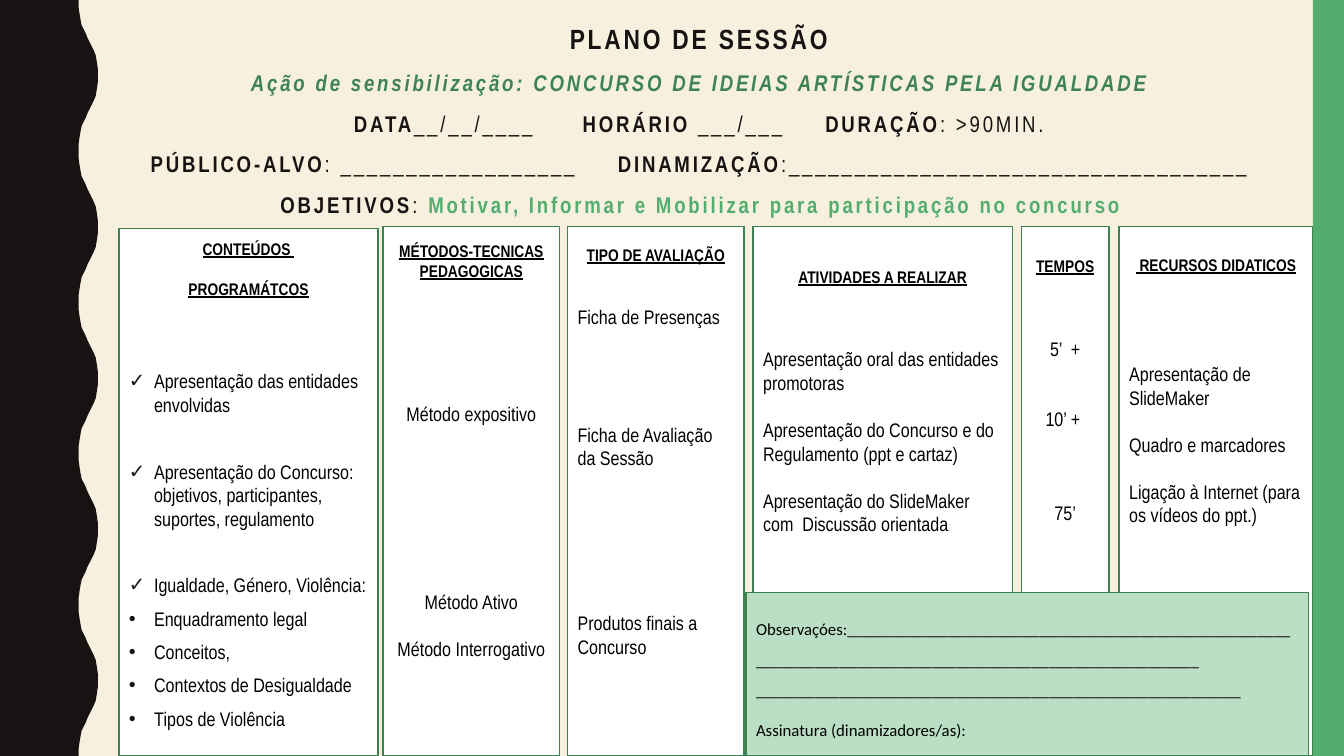
"""Build a one-slide session plan with six columns and a notes box."""
from dataclasses import dataclass

from lxml import etree
from pptx import Presentation
from pptx import util as u
from pptx.dml.color import RGBColor
from pptx.enum import shapes, text
from pptx.oxml.ns import qn

HUE = {"sand": "F7F0DF", "ink": "171312", "green": "53AE6E", "edge": "3D8151",
       "leaf": "3E8352", "pale": "BADFC5", "white": "FFFFFF", "black": "000000"}
MID, LEFT = text.PP_ALIGN.CENTER, text.PP_ALIGN.LEFT
NARROW = "Arial Narrow"


@dataclass
class Item:
    """One paragraph, with the space before it in points."""
    words: str
    gap: float = 0
    mark: str = ""


@dataclass
class Column:
    """One column: place, top inset in points, headings and body."""
    left: float
    wide: float
    inset: float
    heads: list[Item]
    body: list[Item]
    align: text.PP_ALIGN = LEFT
    top: float = 2.25


COLUMNS = [
    Column(1.18, 2.57, 7.3, [Item("CONTEÚDOS "), Item("PROGRAMÁTCOS", 14.3)], [
        Item("Apresentação das entidades envolvidas", 50, "✓"),
        Item("Apresentação do Concurso: objetivos, participantes, suportes, regulamento",
             30.8, "✓"),
        Item("Igualdade, Género, Violência:", 30.8, "✓"),
        Item("Enquadramento legal", 7, "•"),
        Item("Conceitos,", 7, "•"),
        Item("Contextos de Desigualdade", 7, "•"),
        Item("Tipos de Violência", 7, "•")], top=2.27),
    Column(3.8, 1.75, 10, [Item("MÉTODOS-TECNICAS PEDAGOGICAS")], [
        Item("Método expositivo", 86), Item("Método Ativo", 117.6),
        Item("Método Interrogativo", 16.8)], MID),
    Column(5.63, 1.75, 13, [Item("TIPO DE AVALIAÇÃO")], [
        Item("Ficha de Presenças", 28.6),
        Item("Ficha de Avaliação da Sessão", 67.2),
        Item("Produtos finais a Concurso", 100.8)]),
    Column(7.47, 2.57, 28.7, [Item("ATIVIDADES A REALIZAR")], [
        Item("Apresentação oral das entidades promotoras", 43),
        Item("Apresentação do Concurso e do Regulamento (ppt e cartaz)", 16.8),
        Item("Apresentação do SlideMaker com  Discussão orientada", 16.8)]),
    Column(10.13, 0.87, 21, [Item("TEMPOS")], [
        Item("5’  +", 43), Item("10’ + ", 33.6), Item("75’", 50.4)], MID),
    Column(11.1, 1.92, 20, [Item(" RECURSOS DIDATICOS")], [
        Item("Apresentação de SlideMaker", 62.2),
        Item("Quadro e marcadores", 16.8),
        Item("Ligação à Internet (para os vídeos do ppt.)", 16.8)]),
]

BOLD, THIN = {"bold": True}, {"bold": False}
TITLE = [
    [("PLANO DE SESSÃO", {"size": 19.8, "bold": True})],
    [("Ação de sensibilização: CONCURSO DE IDEIAS ARTÍSTICAS PELA IGUALDADE",
      {"hue": "leaf", "bold": True, "slant": True})],
    [("DATA", BOLD), ("__/__/____", THIN), (" ", {"track": 30}),
     ("HORÁRIO", BOLD), (" ___/___", THIN), (" ", {"track": 25}),
     ("DURAÇÃO", BOLD), (": >90MIN.", THIN)],
    [("PÚBLICO-ALVO", BOLD), (": " + "_" * 18, THIN), (" ", {"track": 25}),
     ("DINAMIZAÇÃO", BOLD), (":" + "_" * 35, THIN)],
    [("OBJETIVOS", BOLD), (": ", THIN),
     ("Motivar, Informar e Mobilizar para participação no concurso",
      {"hue": "green", "bold": True})],
]


def tint(name: str) -> RGBColor:
    """Give the colour of that name."""
    return RGBColor.from_string(HUE[name])


def put(par, words: str, *, size: float = 14, hue: str = "black", face: str = NARROW,
        bold: bool = False, slant: bool = False, under: bool = False,
        track: float = 0) -> None:
    """Add a formatted run to a paragraph."""
    run = par.add_run()
    run.text = words
    font = run.font
    font.size, font.name = u.Pt(size), face
    font.bold, font.italic, font.underline = bold, slant, under
    font.color.rgb = tint(hue)
    if track:
        font._element.set("spc", str(round(track * 100)))


def dot(par, mark: str) -> None:
    """Hang a bullet on a paragraph."""
    props = par._p.get_or_add_pPr()
    props.set("marL", str(u.Inches(0.25)))
    props.set("indent", str(-u.Inches(0.25)))
    shade = etree.SubElement(props, qn("a:buClr"))
    etree.SubElement(shade, qn("a:srgbClr")).set("val", HUE["ink"])
    etree.SubElement(props, qn("a:buFont")).set("typeface", "Arial")
    etree.SubElement(props, qn("a:buChar")).set("char", mark)


def paint(shape, fill: str, edge: str = "") -> None:
    """Fill and outline a shape without a shadow."""
    shape.shadow.inherit = False
    shape.fill.solid()
    shape.fill.fore_color.rgb = tint(fill)
    if edge:
        shape.line.color.rgb = tint(edge)
        shape.line.width = u.Pt(1)
    else:
        shape.line.fill.background()


def box(slide, left: float, top: float, wide: float, high: float,
        fill: str, edge: str = ""):
    """Draw a rectangle and return it."""
    rect = slide.shapes.add_shape(shapes.MSO_SHAPE.RECTANGLE, u.Inches(left),
                                  u.Inches(top), u.Inches(wide), u.Inches(high))
    paint(rect, fill, edge)
    return rect


def write(frame, items: list[Item], align: text.PP_ALIGN, lead: float = 1, **look) -> None:
    """Write items as paragraphs, starting in the empty first one."""
    for item in items:
        par = frame.paragraphs[0]
        if par.runs:
            par = frame.add_paragraph()
        par.alignment, par.line_spacing = align, lead
        par.space_before = u.Pt(item.gap)
        put(par, item.words, **look)
        if item.mark:
            dot(par, item.mark)


def wave(slide) -> None:
    """Draw the dark wavy band on the left, in hundredths of an inch."""
    half = [(78, 0), (78, 7), (79, 14), (80, 20), (81, 25), (83, 29), (85, 33),
            (87, 38), (89, 42), (91, 46), (93, 50), (95, 55), (96, 61), (97, 68),
            (97, 75)]
    full = half + [(x, 150 - y) for x, y in half[-2::-1]]
    pts = [(x, y + 150 * n) for n in range(5) for x, y in full]
    pen = slide.shapes.build_freeform(0, 0, scale=u.Inches(0.01))
    pen.add_line_segments(pts + [(0, 750)], close=True)
    paint(pen.convert_to_shape(), "ink")


def head(slide) -> None:
    """Place and fill the title."""
    title = slide.shapes.title
    title.left, title.top = u.Inches(1.02), u.Inches(0)
    title.width, title.height = u.Inches(11.85), u.Inches(2.12)
    frame = title.text_frame
    frame.word_wrap, frame.auto_size = True, text.MSO_AUTO_SIZE.NONE
    frame.vertical_anchor = text.MSO_ANCHOR.TOP
    frame.margin_top, frame.margin_bottom = u.Inches(0.05), 0
    par = frame.paragraphs[0]
    par.alignment, par.line_spacing, par.space_before = MID, 1.5, u.Pt(0)
    for row, runs in enumerate(TITLE):
        if row:
            par.add_line_break()
        for words, look in runs:
            put(par, words, **{"size": 16.2, "hue": "ink", "track": 2, **look})


def draw(slide, col: Column) -> None:
    """Draw one column."""
    frame = box(slide, col.left, col.top, col.wide, 7.5 - col.top,
                "white", "edge").text_frame
    frame.word_wrap, frame.vertical_anchor = True, text.MSO_ANCHOR.TOP
    frame.margin_top = u.Pt(col.inset)
    write(frame, col.heads, MID, size=12, bold=True, under=True)
    write(frame, col.body, col.align)


def notes(slide) -> None:
    """Draw the remarks and signature box."""
    frame = box(slide, 7.4, 5.88, 5.58, 1.62, "pale", "edge").text_frame
    frame.word_wrap, frame.vertical_anchor = True, text.MSO_ANCHOR.MIDDLE
    look = {"size": 12, "face": "Calibri"}
    write(frame, [Item("Observaçóes:" + "_" * 106), Item("_" * 58)], LEFT, 1.5, **look)
    write(frame, [Item("Assinatura (dinamizadores/as):", 14.3)], LEFT, **look)


def main() -> None:
    """Build and save the slide."""
    deck = Presentation()
    deck.slide_width, deck.slide_height = u.Inches(13.33), u.Inches(7.5)
    slide = deck.slides.add_slide(deck.slide_layouts[5])
    slide.background.fill.solid()
    slide.background.fill.fore_color.rgb = tint("sand")
    wave(slide)
    box(slide, 13.02, 0, 0.31, 7.5, "green")
    head(slide)
    for col in COLUMNS:
        draw(slide, col)
    notes(slide)
    deck.save("out.pptx")


if __name__ == "__main__":
    main()
